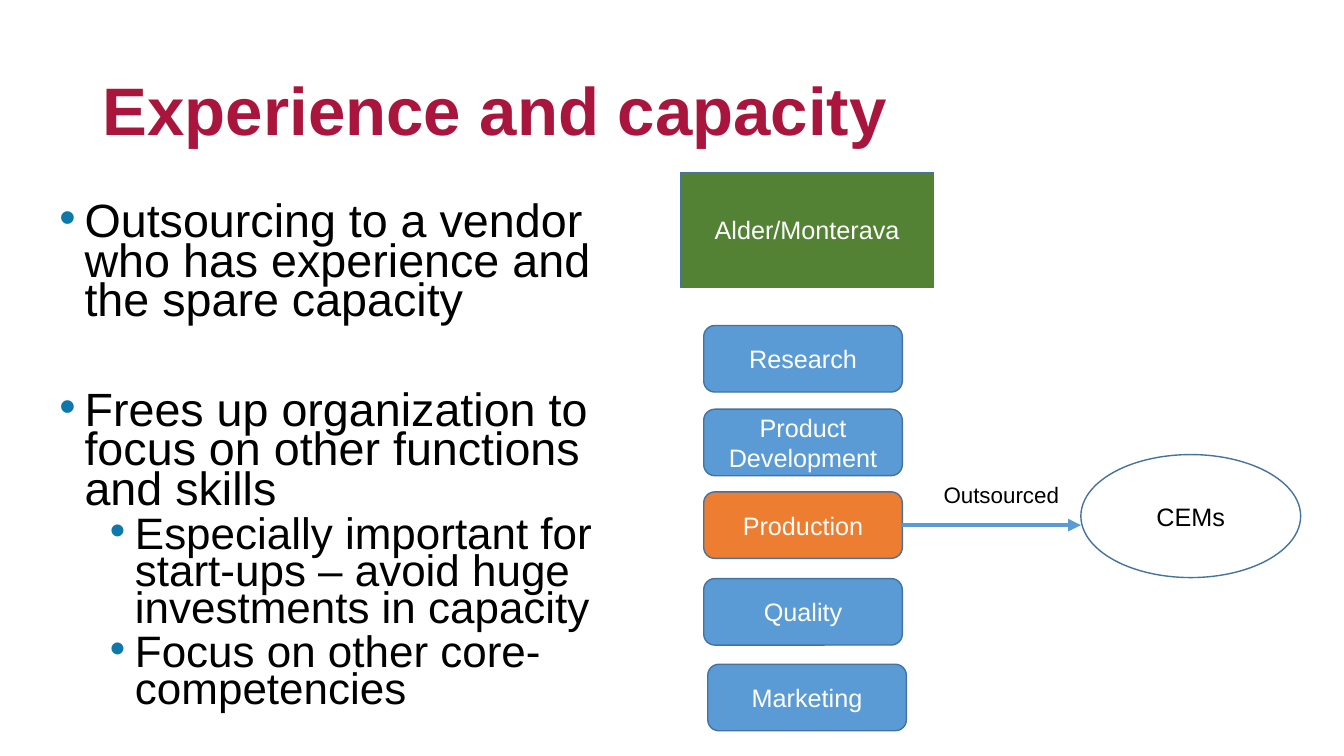
from lxml.etree import SubElement
from pptx import Presentation
from pptx.dml.color import RGBColor
from pptx.enum.shapes import MSO_CONNECTOR, MSO_SHAPE
from pptx.enum.text import MSO_ANCHOR, MSO_AUTO_SIZE, PP_ALIGN
from pptx.oxml.ns import qn
from pptx.util import Inches, Pt

COLORS = {
    "title": "AA153D",
    "bullet": "0E78AD",
    "black": "000000",
    "white": "FFFFFF",
    "company": "548235",
    "stage": "5B9BD5",
    "outsourced": "ED7D31",
    "outline": "43739E",
}
POINTS = [
    (0, "Outsourcing to a vendor who has experience and the spare capacity", 10),
    (0, "Frees up organization to focus on other functions and skills", 51),
    (1, "Especially important for start-ups – avoid huge investments in capacity", 5),
    (1, "Focus on other core-competencies", 5),
]
POINT_SIZES = [33.3, 31.4]
STAGES = [
    ("Research", 0.23, 1.52),
    ("Product Development", 0.23, 2.35),
    ("Production", 0.23, 3.17),
    ("Quality", 0.23, 4.03),
    ("Marketing", 0.27, 4.88),
]
STAGE_WIDTH, STAGE_HEIGHT = 1.97, 0.66


def color(name):
    return RGBColor.from_string(COLORS[name])


def add_run(paragraph, text, size, color_name, bold=False):
    run = paragraph.add_run()
    run.text = text
    run.font.name = "Arial"
    run.font.size = Pt(size)
    run.font.bold = bold
    run.font.color.rgb = color(color_name)


def add_bullet(paragraph, level):
    properties = paragraph._p.get_or_add_pPr()
    properties.set("marL", str(Inches(0.25 + 0.5 * level)))
    properties.set("indent", str(Inches(-0.25)))
    bullet_color = SubElement(properties, qn("a:buClr"))
    SubElement(bullet_color, qn("a:srgbClr"), val=COLORS["bullet"])
    SubElement(properties, qn("a:buFont"), typeface="Arial")
    SubElement(properties, qn("a:buChar"), char="•")


def add_title(slide, left, top, width, height):
    title = slide.shapes.title
    title.left, title.top = Inches(left), Inches(top)
    title.width, title.height = Inches(width), Inches(height)
    frame = title.text_frame
    frame.auto_size = MSO_AUTO_SIZE.NONE
    frame.vertical_anchor = MSO_ANCHOR.MIDDLE
    paragraph = frame.paragraphs[0]
    paragraph.alignment = PP_ALIGN.LEFT
    paragraph.line_spacing = 0.9
    add_run(paragraph, "Experience and capacity", 48, "title", bold=True)


def add_text_box(slide, left, top, width, height):
    box = slide.shapes.add_textbox(
        Inches(left), Inches(top), Inches(width), Inches(height))
    box.text_frame.word_wrap = True
    return box.text_frame


def add_points(slide, left, top, width, height):
    frame = add_text_box(slide, left, top, width, height)
    for index, (level, text, space_before) in enumerate(POINTS):
        paragraph = frame.add_paragraph() if index else frame.paragraphs[0]
        paragraph.level = level
        paragraph.line_spacing = 0.7
        paragraph.space_before = Pt(space_before)
        add_bullet(paragraph, level)
        add_run(paragraph, text, POINT_SIZES[level], "black")


def add_node(slide, kind, text, left, top, width, height, fill=None):
    shape = slide.shapes.add_shape(
        kind, Inches(left), Inches(top), Inches(width), Inches(height))
    shape.shadow.inherit = False
    if fill:
        shape.fill.solid()
        shape.fill.fore_color.rgb = color(fill)
    else:
        shape.fill.background()
    shape.line.color.rgb = color("outline")
    shape.line.width = Pt(1)
    frame = shape.text_frame
    frame.word_wrap = True
    frame.vertical_anchor = MSO_ANCHOR.MIDDLE
    paragraph = frame.paragraphs[0]
    paragraph.alignment = PP_ALIGN.CENTER
    add_run(paragraph, text, 18, "white" if fill else "black")


def add_arrow(slide, start, end, level):
    arrow = slide.shapes.add_connector(
        MSO_CONNECTOR.STRAIGHT,
        Inches(start), Inches(level), Inches(end), Inches(level))
    arrow.line.color.rgb = color("stage")
    arrow.line.width = Pt(3)
    SubElement(arrow.line._get_or_add_ln(), qn("a:tailEnd"), type="triangle")
    SubElement(arrow._element.spPr, qn("a:effectLst"))


def add_outsourcing_diagram(slide, left, top, width):
    vendor_width = 2.18
    vendor_left = left + width - vendor_width
    add_node(slide, MSO_SHAPE.RECTANGLE, "Alder/Monterava",
             left, top, 2.51, 1.14, "company")
    for name, offset_x, offset_y in STAGES:
        fill = "outsourced" if name == "Production" else "stage"
        add_node(slide, MSO_SHAPE.ROUNDED_RECTANGLE, name, left + offset_x,
                 top + offset_y, STAGE_WIDTH, STAGE_HEIGHT, fill)
        if name == "Production":
            add_arrow(slide, left + offset_x + STAGE_WIDTH, vendor_left,
                      top + offset_y + STAGE_HEIGHT / 2)
    add_node(slide, MSO_SHAPE.OVAL, "CEMs",
             vendor_left, top + 2.8, vendor_width, 1.22)
    label = add_text_box(slide, left + 2.51, top + 3.01, 1.46, 0.37)
    add_run(label.paragraphs[0], "Outsourced", 16, "black")


def main():
    presentation = Presentation()
    presentation.slide_width = Inches(13.33)
    presentation.slide_height = Inches(7.5)
    slide = presentation.slides.add_slide(presentation.slide_layouts[5])
    add_title(slide, 0.92, 0.4, 9.71, 1.45)
    add_points(slide, 0.49, 2, 5.95, 5.02)
    add_outsourcing_diagram(slide, 6.75, 1.71, 6.15)
    presentation.save("out.pptx")


if __name__ == "__main__":
    main()
